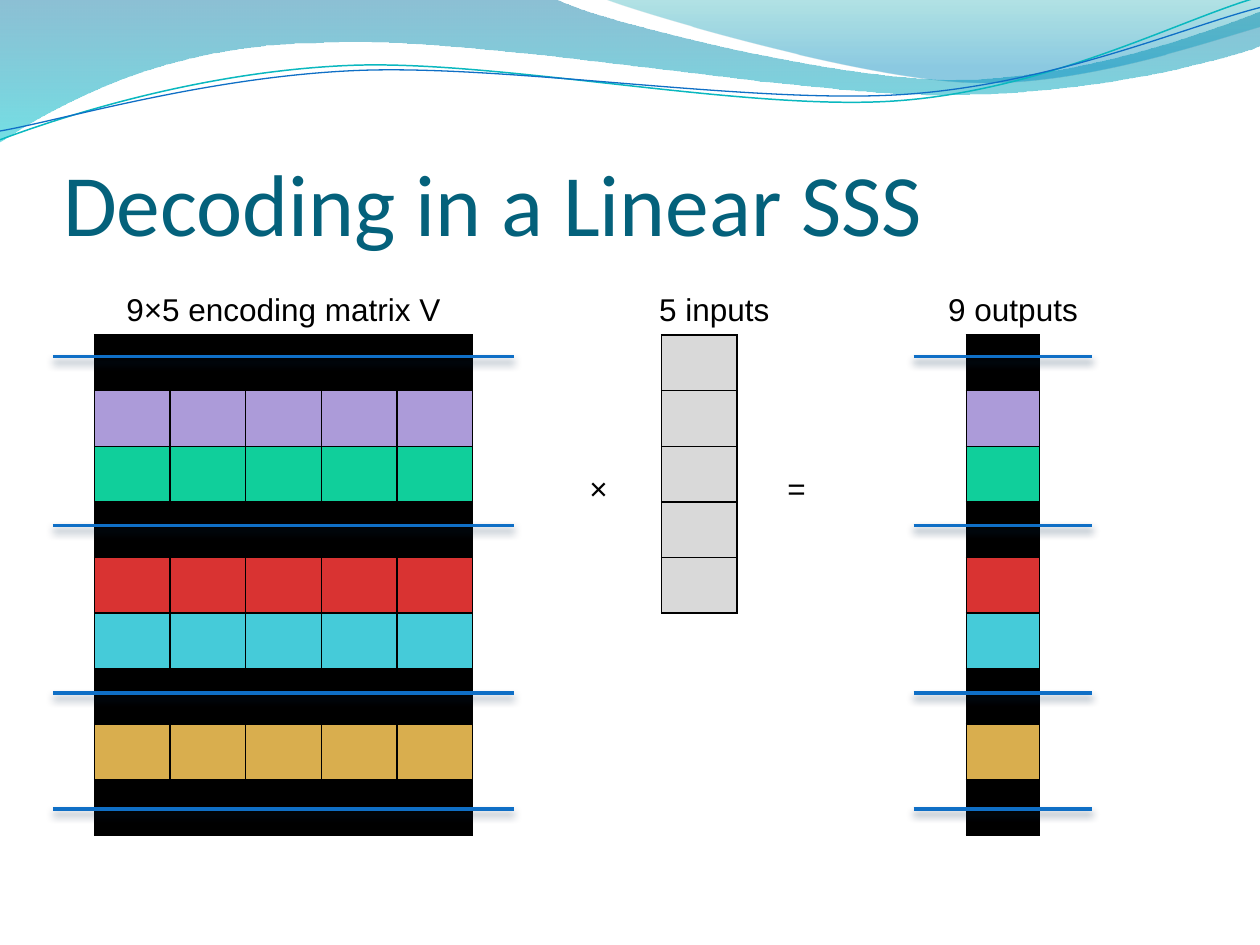
import pptx
import pptx.dml.color
import pptx.enum.shapes
import pptx.enum.text
import pptx.oxml
import pptx.oxml.ns
import pptx.util
from lxml import etree

Inches = pptx.util.Inches
Pt = pptx.util.Pt
RGBColor = pptx.dml.color.RGBColor
qn = pptx.oxml.ns.qn
NSDECL = pptx.oxml.ns.nsdecls("a")

BLACK = RGBColor(0x00, 0x00, 0x00)
PURPLE = RGBColor(0xAC, 0x9B, 0xD9)
GREEN = RGBColor(0x10, 0xCF, 0x9B)
RED = RGBColor(0xD9, 0x33, 0x32)
CYAN = RGBColor(0x45, 0xCB, 0xD9)
GOLD = RGBColor(0xD9, 0xAE, 0x4E)
GREY = RGBColor(0xD9, 0xD9, 0xD9)
TITLE_COLOR = RGBColor(0x04, 0x61, 0x7B)
BLUE = RGBColor(0x0F, 0x6F, 0xC6)
TEAL = RGBColor(0x0A, 0xB8, 0xBF)
STRIKE_SHADOW = RGBColor(0x04, 0x27, 0x47)
WAVE_TOP = RGBColor(0x00, 0x74, 0xA1)
WAVE_BOTTOM = RGBColor(0x00, 0xC6, 0xCF)
CREST_TOP = RGBColor(0x00, 0xA1, 0xA9)
CREST_BOTTOM = RGBColor(0x00, 0x8B, 0xBF)

SHARE_ROWS = [BLACK, PURPLE, GREEN, BLACK, RED, CYAN, BLACK, GOLD, BLACK]
STRIKE_TOPS = [2.83, 4.17, 5.5, 6.42]
GRID_TOP = 2.66
ROW_HEIGHT = 3.97 / len(SHARE_ROWS)

# Outlines in inches: a 2-tuple is a straight step, a 6-tuple a Bezier step
WAVE = [(0, -0.01), (4.4, -0.01), (4.76, 0.17, 6.64, 0.63, 7.58, 0.63),
        (8.53, 0.63, 9.58, 0.26, 10, 0.09), (10.01, 0.36),
        (9.83, 0.44, 8.7, 0.76, 7.46, 0.75), (6.22, 0.75, 3.82, 0.28, 2.57, 0.34),
        (1.29, 0.35, 0.46, 0.83, -0.01, 1.13)]
CREST = [(4.79, -0.01), (5.09, 0.11, 6.82, 0.62, 7.69, 0.65),
         (8.56, 0.69, 9.61, 0.32, 10, 0.21), (10, 0)]
TEAL_CURVE = [(0, 1.11), (0.48, 0.93, 1.58, 0.57, 2.77, 0.52),
              (3.95, 0.47, 5.93, 0.89, 7.13, 0.8), (8.33, 0.71, 9.38, 0.15, 9.98, -0.02)]
BLUE_CURVE = [(0, 1.04), (0.47, 0.96, 1.64, 0.61, 2.83, 0.56),
              (4.03, 0.51, 5.97, 0.83, 7.17, 0.75), (8.36, 0.67, 9.41, 0.21, 10, 0.06)]


def add_outline(slide, steps, close):
    """Build a freeform through the step ends, then bend its Bezier steps."""
    steps = [[Inches(length) for length in step] for step in steps]
    anchors = [step[-2:] for step in steps]
    builder = slide.shapes.build_freeform(*anchors[0])
    builder.add_line_segments(anchors[1:], close=close)
    outline = builder.convert_to_shape()
    outline.shadow.inherit = False
    segments = list(outline._element.iter(qn("a:lnTo")))
    for segment, step in zip(segments, steps[1:]):
        if len(step) == 6:
            segment.tag = qn("a:cubicBezTo")
            for i in (0, 2):
                control = etree.Element(qn("a:pt"), x=str(step[i] - outline.left),
                                        y=str(step[i + 1] - outline.top))
                segment.insert(i // 2, control)
    return outline


def add_wave(slide, steps, stops):
    wave = add_outline(slide, steps, True)
    wave.line.fill.background()
    wave.fill.gradient()
    wave.fill.gradient_angle = 270
    tints = wave._element.spPr.iter(qn("a:gs"))
    for stop, tint, (position, color, opacity) in zip(wave.fill.gradient_stops, tints, stops):
        stop.position = position
        stop.color.rgb = color
        etree.SubElement(tint[0], qn("a:alpha"), val=str(opacity * 1000))


def add_curve(slide, steps, color, width):
    curve = add_outline(slide, steps, False)
    curve.fill.background()
    curve.line.color.rgb = color
    curve.line.width = Pt(width)


def add_header_waves(slide):
    add_wave(slide, WAVE, [(0, WAVE_TOP, 45), (1, WAVE_BOTTOM, 55)])
    add_wave(slide, CREST, [(0, CREST_TOP, 30), (0.8, CREST_BOTTOM, 45)])
    add_curve(slide, TEAL_CURVE, TEAL, 0.85)
    add_curve(slide, BLUE_CURVE, BLUE, 0.75)


def set_title(slide, left, top, width, height):
    title = slide.shapes.title
    title.left, title.top = Inches(left), Inches(top)
    title.width, title.height = Inches(width), Inches(height)
    frame = title.text_frame
    frame.text = "Decoding in a Linear SSS"
    frame.vertical_anchor = pptx.enum.text.MSO_ANCHOR.BOTTOM
    frame.margin_left = frame.margin_right = frame.margin_bottom = 0
    paragraph = frame.paragraphs[0]
    paragraph.alignment = pptx.enum.text.PP_ALIGN.LEFT
    paragraph.font.size = Pt(50)
    paragraph.font.name = "Calibri"
    paragraph.font.color.rgb = TITLE_COLOR


def add_label(slide, text, left, top, width, centered=True):
    label = slide.shapes.add_textbox(Inches(left), Inches(top), Inches(width), Inches(0.4))
    label.text_frame.word_wrap = centered
    paragraph = label.text_frame.paragraphs[0]
    paragraph.text = text
    if centered:
        paragraph.alignment = pptx.enum.text.PP_ALIGN.CENTER
    paragraph.font.size = Pt(18)
    paragraph.font.name = "Arial"
    paragraph.font.color.rgb = BLACK


def add_grid(slide, left, column_width, columns, row_colors):
    rows = len(row_colors)
    grid = slide.shapes.add_table(rows, columns, Inches(left), Inches(GRID_TOP),
                                  Inches(column_width * columns),
                                  Inches(ROW_HEIGHT * rows)).table
    grid.first_row = grid.horz_banding = False
    for column in grid.columns:
        column.width = Inches(column_width)
    for row, color in zip(grid.rows, row_colors):
        row.height = Inches(ROW_HEIGHT)
        for cell in row.cells:
            properties = cell._tc.get_or_add_tcPr()
            for side in "LRTB":
                properties.append(pptx.oxml.parse_xml(
                    f'<a:ln{side} {NSDECL} w="{Pt(1)}"><a:solidFill>'
                    f'<a:srgbClr val="{BLACK}"/></a:solidFill></a:ln{side}>'))
            cell.fill.solid()
            cell.fill.fore_color.rgb = color


def add_strikes(slide, left, right):
    """Cross out the missing rows between two edges."""
    for top in STRIKE_TOPS:
        strike = slide.shapes.add_connector(
            pptx.enum.shapes.MSO_CONNECTOR.STRAIGHT,
            Inches(left), Inches(top), Inches(right), Inches(top))
        strike.line.color.rgb = BLUE
        strike.line.width = Pt(2)
        strike._element.spPr.append(pptx.oxml.parse_xml(
            f'<a:effectLst {NSDECL}><a:outerShdw blurRad="{Pt(4.5)}" dist="{Pt(3)}" '
            f'dir="5400000" rotWithShape="0"><a:srgbClr val="{STRIKE_SHADOW}">'
            '<a:alpha val="48000"/></a:srgbClr></a:outerShdw></a:effectLst>'))


def add_equation(slide):
    # Encoding matrix
    add_grid(slide, 0.75, 0.6, 5, SHARE_ROWS)
    add_label(slide, "9×5 encoding matrix V", 0.75, 2.25, 3)
    # Outputs and inputs
    add_grid(slide, 7.67, 0.58, 1, SHARE_ROWS)
    add_grid(slide, 5.25, 0.6, 1, [GREY] * 5)
    # Operators
    add_label(slide, "×", 4.58, 3.67, 0.35, centered=False)
    add_label(slide, "=", 6.15, 3.67, 0.35, centered=False)
    # Column headings
    add_label(slide, "5 inputs", 4.67, 2.25, 2)
    add_label(slide, "9 outputs", 6.33, 2.25, 3.42)
    # Missing shares
    add_strikes(slide, 0.42, 4.08)
    add_strikes(slide, 7.25, 8.67)


def main():
    deck = pptx.Presentation()
    deck.slide_width, deck.slide_height = Inches(10), Inches(7.5)
    slide = deck.slides.add_slide(deck.slide_layouts[5])
    add_header_waves(slide)
    set_title(slide, 0.5, 0.77, 9, 1.25)
    add_equation(slide)
    deck.save("out.pptx")


if __name__ == "__main__":
    main()
